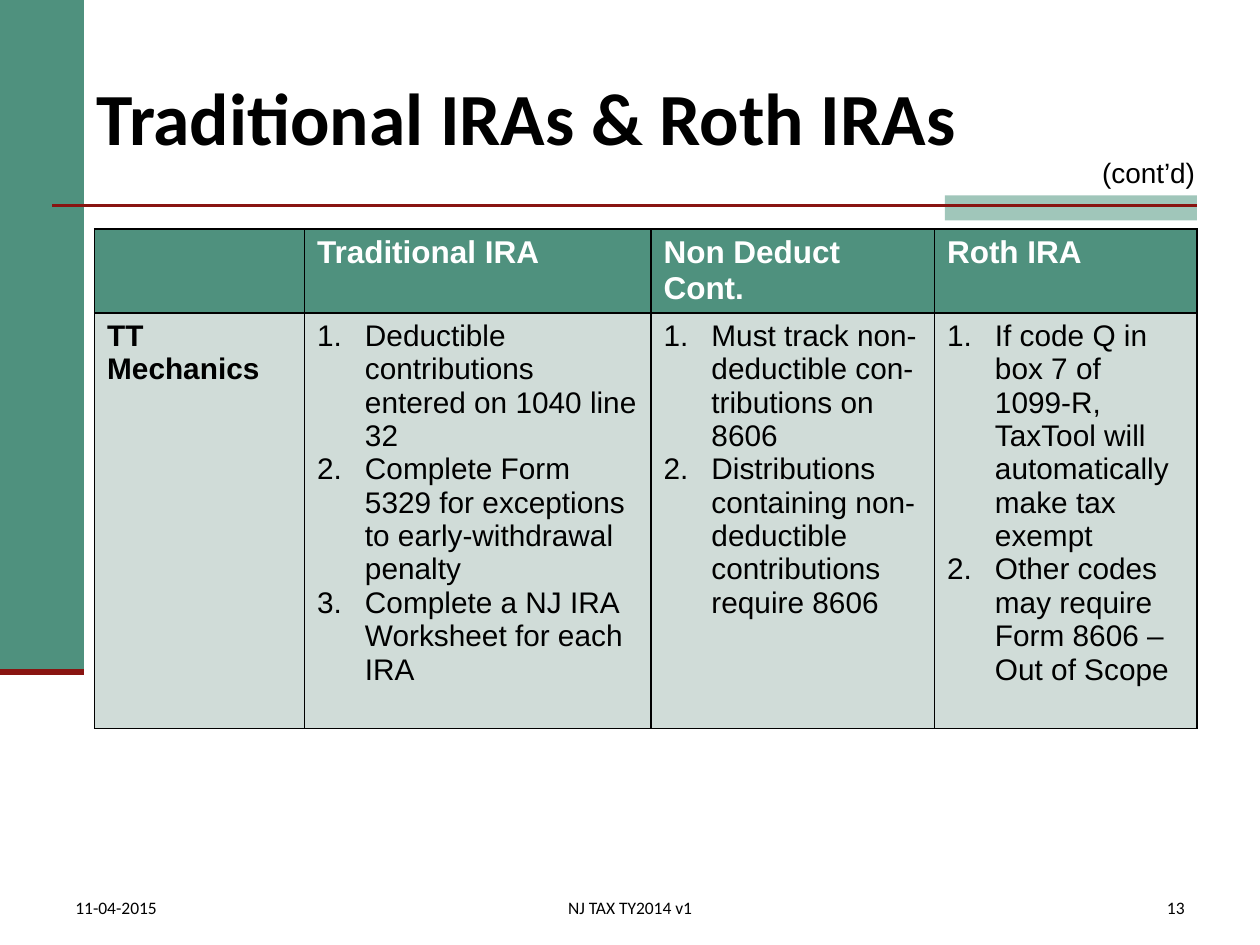
import dataclasses
import typing

import pptx
import pptx.dml.color
import pptx.enum.shapes
import pptx.enum.text
import pptx.oxml
import pptx.oxml.ns
import pptx.util

ALIGN = pptx.enum.text.PP_ALIGN
ANCHOR = pptx.enum.text.MSO_ANCHOR


@dataclasses.dataclass(frozen=True)
class Theme:
    green: str = "4F917E"
    light_green: str = "A0C6BA"
    body_fill: str = "D0DCD8"
    red: str = "891411"
    black: str = "000000"
    white: str = "FFFFFF"
    heading_font: str = "Calibri"
    body_font: str = "Arial"
    title_size: float = 42
    header_size: float = 18
    body_size: float = 17
    note_size: float = 16
    footer_size: float = 10


class Area(typing.NamedTuple):
    """Place on the page, in grid columns and rows."""
    left: float
    top: float
    width: float
    height: float


class Style(typing.NamedTuple):
    font: str
    size: float
    color: str
    bold: bool = False


class Label(typing.NamedTuple):
    text: str
    area: Area
    style: Style
    align: ALIGN
    anchor: ANCHOR = ANCHOR.BOTTOM
    wrap: bool = True


class Rule(typing.NamedTuple):
    start: tuple[float, float]
    end: tuple[float, float]
    weight: float


class Column(typing.NamedTuple):
    width: float
    heading: str
    entries: tuple[str, ...]
    numbered: bool = True


THEME = Theme()
TITLE = Style(THEME.heading_font, THEME.title_size, THEME.black, True)
HEADER = Style(THEME.body_font, THEME.header_size, THEME.white, True)
ROW_NAME = Style(THEME.body_font, THEME.body_size, THEME.black, True)
BODY = Style(THEME.body_font, THEME.body_size, THEME.black)
NOTE = Style(THEME.body_font, THEME.note_size, THEME.black)
FOOTER = Style(THEME.heading_font, THEME.footer_size, THEME.black)

# The page is 120 grid columns by 90 grid rows.
PAGE_WIDTH, PAGE_HEIGHT = 120, 90
RIGHT = 114
SIDEBAR = Area(0, 0, 8, 64)
BLOCKS = [(SIDEBAR, THEME.green), (Area(90, 18.6, 24, 2.4), THEME.light_green)]
RULES = [
    Rule((5, 19.6), (RIGHT, 19.6), 1.5),
    Rule((0, SIDEBAR.height), (SIDEBAR.width, SIDEBAR.height), 3.5),
]
TITLE_AREA = Area(8, 3.6, RIGHT - 8, 15)
LABELS = [
    Label("(cont’d)", Area(103.6, 14.2, 11.4, 4.4), NOTE, ALIGN.RIGHT, ANCHOR.TOP, False),
    Label("11-04-2015", Area(6, 84, 26, 4), FOOTER, ALIGN.LEFT),
    Label("NJ TAX TY2014 v1", Area(39.75, 84, 40.5, 4), FOOTER, ALIGN.CENTER),
    Label("13", Area(89, 84, 25, 4), FOOTER, ALIGN.RIGHT),
]
TABLE_LEFT, TABLE_TOP = 9, 21.8
ROW_HEIGHTS = (8, 39.6)
COLUMNS = [
    Column(20, "", ("TT Mechanics",), False),
    Column(33, "Traditional IRA", (
        "Deductible contributions entered on 1040 line 32",
        "Complete Form 5329 for exceptions to early-withdrawal penalty",
        "Complete a NJ IRA Worksheet for each IRA")),
    Column(27, "Non Deduct Cont.", (
        "Must track non-deductible con-tributions on 8606",
        "Distributions containing non-deductible contributions require 8606")),
    Column(25, "Roth IRA", (
        "If code Q in box 7 of 1099-R, TaxTool will automatically make tax exempt",
        "Other codes may require Form 8606 – Out of Scope")),
]


def grid(units: float) -> pptx.util.Emu:
    return pptx.util.Inches(units / 12)


def place(area: Area) -> list[pptx.util.Emu]:
    return [grid(units) for units in area]


def rgb(color: str) -> pptx.dml.color.RGBColor:
    return pptx.dml.color.RGBColor.from_string(color)


def add_span(para, text: str, style: Style) -> None:
    span = para.add_run()
    span.text = text
    span.font.name = style.font
    span.font.size = pptx.util.Pt(style.size)
    span.font.bold = style.bold
    span.font.color.rgb = rgb(style.color)


def add_block(page, area: Area, color: str) -> None:
    block = page.shapes.add_shape(pptx.enum.shapes.MSO_SHAPE.RECTANGLE, *place(area))
    block.shadow.inherit = False
    block.fill.solid()
    block.fill.fore_color.rgb = rgb(color)
    block.line.fill.background()


def add_rule(page, rule: Rule) -> None:
    ends = [grid(units) for units in rule.start + rule.end]
    line = page.shapes.add_connector(pptx.enum.shapes.MSO_CONNECTOR.STRAIGHT, *ends)
    line.line.color.rgb = rgb(THEME.red)
    line.line.width = pptx.util.Pt(rule.weight)
    line._element.spPr.append(pptx.oxml.parse_xml(
        f'<a:effectLst {pptx.oxml.ns.nsdecls("a")}/>'))


def add_label(page, label: Label) -> None:
    box = page.shapes.add_textbox(*place(label.area))
    frame = box.text_frame
    frame.word_wrap = label.wrap
    frame.vertical_anchor = label.anchor
    para = frame.paragraphs[0]
    para.alignment = label.align
    add_span(para, label.text, label.style)


def number_paragraph(para) -> None:
    """Give a paragraph an automatic number and a hanging indent."""
    properties = para._p.get_or_add_pPr()
    indent = pptx.util.Inches(0.38)
    properties.set("marL", str(indent))
    properties.set("indent", str(-indent))
    properties.append(pptx.oxml.parse_xml(
        f'<a:buAutoNum {pptx.oxml.ns.nsdecls("a")} type="arabicPeriod"/>'))


def format_cell(cell, fill: str) -> None:
    """Set the fill and a thin black border on all four sides."""
    cell.fill.solid()
    cell.fill.fore_color.rgb = rgb(fill)
    properties = cell._tc.get_or_add_tcPr()
    for index, side in enumerate(("lnL", "lnR", "lnT", "lnB")):
        properties.insert(index, pptx.oxml.parse_xml(
            f'<a:{side} {pptx.oxml.ns.nsdecls("a")} w="{pptx.util.Pt(1)}"><a:solidFill>'
            f'<a:srgbClr val="{THEME.black}"/></a:solidFill></a:{side}>'))


def add_comparison(page) -> None:
    area = Area(TABLE_LEFT, TABLE_TOP, sum(column.width for column in COLUMNS), sum(ROW_HEIGHTS))
    table = page.shapes.add_table(len(ROW_HEIGHTS), len(COLUMNS), *place(area)).table
    for row, height in zip(table.rows, ROW_HEIGHTS):
        row.height = grid(height)
    for index, column in enumerate(COLUMNS):
        table.columns[index].width = grid(column.width)
        header, body = table.cell(0, index), table.cell(1, index)
        format_cell(header, THEME.green)
        format_cell(body, THEME.body_fill)
        if column.heading:
            add_span(header.text_frame.paragraphs[0], column.heading, HEADER)
        for position, entry in enumerate(column.entries):
            frame = body.text_frame
            para = frame.add_paragraph() if position else frame.paragraphs[0]
            if column.numbered:
                number_paragraph(para)
            add_span(para, entry, BODY if column.numbered else ROW_NAME)


def add_title(page, text: str) -> None:
    title = page.shapes.title
    title.left, title.top, title.width, title.height = place(TITLE_AREA)
    title.text_frame.vertical_anchor = ANCHOR.MIDDLE
    para = title.text_frame.paragraphs[0]
    para.alignment = ALIGN.LEFT
    add_span(para, text, TITLE)


def main() -> None:
    deck = pptx.Presentation()
    deck.slide_width, deck.slide_height = grid(PAGE_WIDTH), grid(PAGE_HEIGHT)
    page = deck.slides.add_slide(deck.slide_layouts.get_by_name("Title Only"))
    for area, color in BLOCKS:
        add_block(page, area, color)
    for rule in RULES:
        add_rule(page, rule)
    add_title(page, "Traditional IRAs & Roth IRAs")
    add_comparison(page)
    for label in LABELS:
        add_label(page, label)
    deck.save("out.pptx")


if __name__ == "__main__":
    main()
